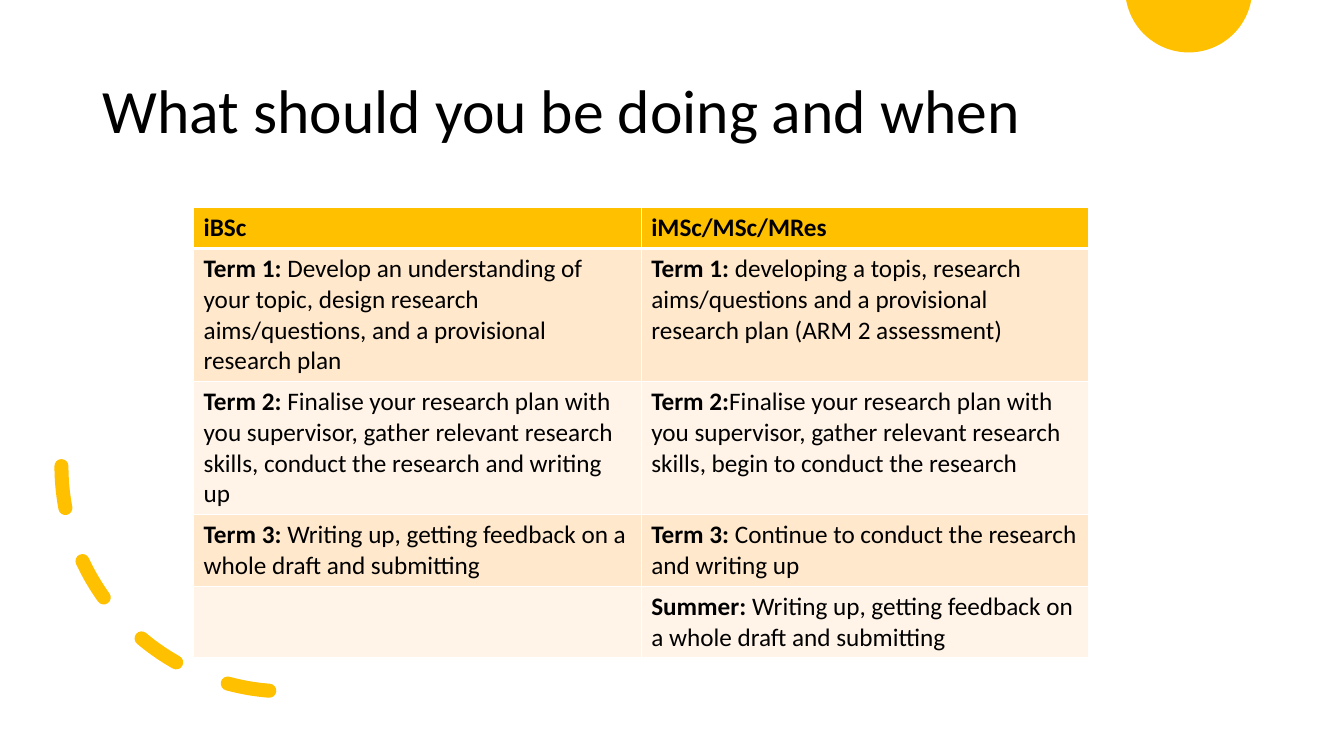
from math import cos, radians, sin

from lxml.etree import SubElement
from pptx import Presentation
from pptx.dml.color import RGBColor
from pptx.enum.dml import MSO_LINE
from pptx.enum.shapes import MSO_SHAPE
from pptx.enum.text import MSO_ANCHOR, MSO_AUTO_SIZE, PP_ALIGN
from pptx.oxml.ns import qn
from pptx.util import Inches, Pt

TITLE = "What should you be doing and when"
ROWS = [
    (("iBSc", ""), ("iMSc/MSc/MRes", "")),
    (("Term 1: ", "Develop an understanding of your topic, design research "
      "aims/questions, and a provisional research plan"),
     ("Term 1: ", "developing a topis, research aims/questions and a provisional "
      "research plan (ARM 2 assessment)")),
    (("Term 2: ", "Finalise your research plan with you supervisor, gather relevant "
      "research skills, conduct the research and writing up"),
     ("Term 2:", "Finalise your research plan with you supervisor, gather relevant "
      "research skills, begin to conduct the research")),
    (("Term 3: ", "Writing up, getting feedback on a whole draft and submitting"),
     ("Term 3: ", "Continue to conduct the research and writing up")),
    (("", ""),
     ("Summer: ", "Writing up, getting feedback on a whole draft and submitting")),
]
LINES_PER_ROW = [1, 4, 4, 2, 2]
COLORS = {"gold": "FFC000", "band": "FFE8CC", "pale": "FFF4E7",
          "text": "000000", "border": "FFFFFF"}
TITLE_FORMAT = {"name": "Calibri", "size": Pt(44), "bold": False}
CELL_FORMAT = {"name": "Calibri", "size": Pt(18)}

LINE_HEIGHT, CELL_PADDING = 0.3, 0.1
TABLE_LEFT, TABLE_TOP, COLUMN_WIDTH = 1.92, 2.06, 4.44
SUN_X, SUN_Y, SUN_RADIUS = 11.79, -0.11, 0.63
ARC_LEFT, ARC_TOP, ARC_SIZE = 0.61, 2.39, 4.47


def color(name):
    return RGBColor.from_string(COLORS[name])


def format_font(font, values):
    for name, value in values.items():
        setattr(font, name, value)
    font.color.rgb = color("text")


def add_borders(cell, widths):
    """Put white lines round a cell; widths maps L, R, T, B to points."""
    properties = cell._tc.get_or_add_tcPr()
    for position, (side, width) in enumerate(widths.items()):
        line = SubElement(properties, qn(f"a:ln{side}"), w=str(Pt(width)))
        fill = SubElement(line, qn("a:solidFill"))
        SubElement(fill, qn("a:srgbClr"), val=COLORS["border"])
        properties.insert(position, line)


def add_sun(slide):
    """Draw the part of a circle that hangs below the top edge."""
    points = [(Inches(SUN_X + SUN_RADIUS * cos(radians(angle))),
               Inches(max(0, SUN_Y + SUN_RADIUS * sin(radians(angle)))))
              for angle in range(10, 171, 2)]
    builder = slide.shapes.build_freeform(*points[0])
    builder.add_line_segments(points[1:], close=True)
    sun = builder.convert_to_shape()
    sun.shadow.inherit = False
    sun.fill.solid()
    sun.fill.fore_color.rgb = color("gold")
    sun.line.fill.background()


def add_title(slide):
    title = slide.shapes.title
    title.left, title.top, title.width, title.height = map(Inches, (0.92, 0.4, 11.5, 1.45))
    frame = title.text_frame
    frame.text = TITLE
    frame.word_wrap = True
    frame.auto_size = MSO_AUTO_SIZE.NONE
    frame.vertical_anchor = MSO_ANCHOR.MIDDLE
    para = frame.paragraphs[0]
    para.alignment = PP_ALIGN.LEFT
    para.line_spacing = 0.9
    format_font(para.runs[0].font, TITLE_FORMAT)


def add_dashed_arc(slide):
    arc = slide.shapes.add_shape(MSO_SHAPE.ARC, Inches(ARC_LEFT), Inches(ARC_TOP),
                                 Inches(ARC_SIZE), Inches(ARC_SIZE))
    arc.shadow.inherit = False
    arc.rotation = 90
    arc._element.spPr.xfrm.set("flipV", "1")
    arc.fill.background()
    arc.line.color.rgb = color("gold")
    arc.line.width = Pt(10)
    arc.line.dash_style = MSO_LINE.DASH
    arc.line._ln.set("cap", "rnd")


def add_schedule(slide):
    heights = [lines * LINE_HEIGHT + CELL_PADDING for lines in LINES_PER_ROW]
    columns = len(ROWS[0])
    table = slide.shapes.add_table(
        len(ROWS), columns, Inches(TABLE_LEFT), Inches(TABLE_TOP),
        Inches(columns * COLUMN_WIDTH), Inches(sum(heights))).table
    for column in table.columns:
        column.width = Inches(COLUMN_WIDTH)
    for index, (entries, height) in enumerate(zip(ROWS, heights)):
        table.rows[index].height = Inches(height)
        fill_name = "gold" if index == 0 else ("pale", "band")[index % 2]
        for cell, (label, detail) in zip(table.rows[index].cells, entries):
            cell.fill.solid()
            cell.fill.fore_color.rgb = color(fill_name)
            add_borders(cell, {"L": 1, "R": 1, "T": 3 if index == 1 else 1,
                               "B": 3 if index == 0 else 1})
            para = cell.text_frame.paragraphs[0]
            format_font(para.font, CELL_FORMAT)
            for text, bold in ((label, True), (detail, False)):
                if text:
                    span = para.add_run()
                    span.text = text
                    format_font(span.font, CELL_FORMAT | {"bold": bold})


def main():
    deck = Presentation()
    deck.slide_width, deck.slide_height = Inches(13.33), Inches(7.5)
    slide = deck.slides.add_slide(deck.slide_layouts[5])
    add_sun(slide)
    add_title(slide)
    add_dashed_arc(slide)
    add_schedule(slide)
    deck.save("out.pptx")


if __name__ == "__main__":
    main()
